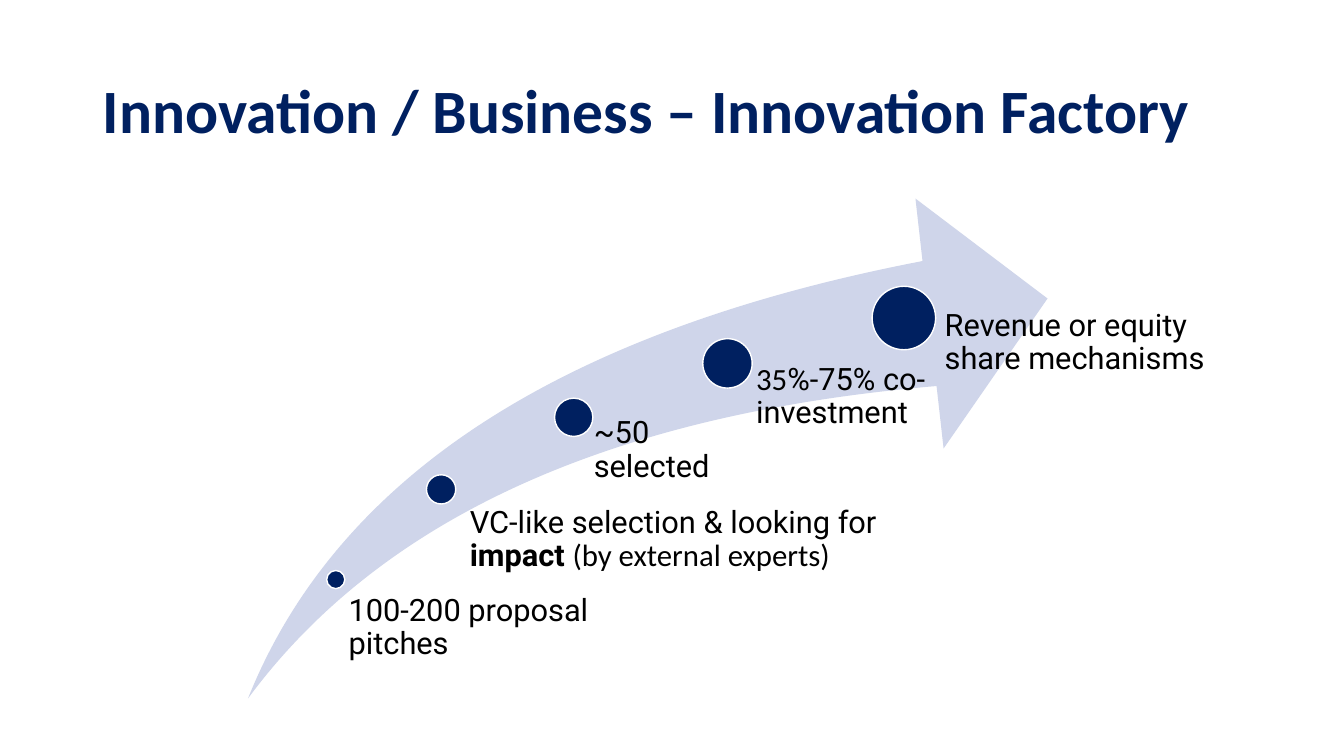
from dataclasses import dataclass

from pptx import Presentation
from pptx.dml.color import RGBColor
from pptx.enum.shapes import MSO_SHAPE
from pptx.enum.text import MSO_ANCHOR
from pptx.shapes.autoshape import Shape
from pptx.slide import Slide
from pptx.util import Inches, Pt

NAVY = RGBColor(0x00, 0x20, 0x60)
PALE_BLUE = RGBColor(0xCF, 0xD5, 0xEA)
WHITE = RGBColor(0xFF, 0xFF, 0xFF)
BLACK = RGBColor(0x00, 0x00, 0x00)
HEADING_FONT = "Calibri"
BODY_FONT = "Roboto"


@dataclass(frozen=True)
class Words:
    text: str
    font: str = BODY_FONT
    bold: bool = False


@dataclass(frozen=True)
class Box:
    left: float
    top: float
    width: float
    height: float


@dataclass(frozen=True)
class Stage:
    """A dot on the arrow (left, top, diameter) and its label; lengths in inches."""
    dot_left: float
    dot_top: float
    diameter: float
    label: Box
    inset: float
    words: tuple[Words, ...]


STAGES = (
    Stage(3.24, 5.66, 0.18, Box(3.36, 5.9, 3.31, 0.91), 0.1,
          (Words("100-200 proposal pitches"),)),
    Stage(4.23, 4.71, 0.29, Box(4.51, 5.03, 4.21, 1.07), 0.15,
          (Words("VC-like selection & looking for "),
           Words("impact ", bold=True),
           Words("(by external experts)", HEADING_FONT))),
    Stage(5.5, 3.95, 0.38, Box(5.69, 4.14, 1.53, 2.79), 0.2,
          (Words("~50 selected"),)),
    Stage(6.97, 3.36, 0.49, Box(7.24, 3.61, 2.35, 3.32), 0.26,
          (Words("35", HEADING_FONT), Words("%-75% co-investment"))),
    Stage(8.65, 2.84, 0.63, Box(9.04, 3.07, 3.07, 3.65), 0.33,
          (Words("Revenue or equity share mechanisms"),)),
)


def add_filled_shape(s: Slide, kind: MSO_SHAPE, box: Box, fill: RGBColor) -> Shape:
    sp = s.shapes.add_shape(kind, Inches(box.left), Inches(box.top),
                            Inches(box.width), Inches(box.height))
    sp.shadow.inherit = False
    sp.fill.solid()
    sp.fill.fore_color.rgb = fill
    sp.line.fill.background()
    return sp


def add_text(s: Slide, box: Box, words: tuple[Words, ...], size: int,
             color: RGBColor) -> Shape:
    sp = s.shapes.add_textbox(Inches(box.left), Inches(box.top),
                              Inches(box.width), Inches(box.height))
    tf = sp.text_frame
    tf.word_wrap = True
    p = tf.paragraphs[0]
    p.line_spacing = 0.9
    for part in words:
        r = p.add_run()
        r.text = part.text
        r.font.name = part.font
        r.font.size = Pt(size)
        r.font.bold = part.bold
        r.font.color.rgb = color
    return sp


def add_stage(s: Slide, stage: Stage) -> None:
    dot = add_filled_shape(
        s, MSO_SHAPE.OVAL,
        Box(stage.dot_left, stage.dot_top, stage.diameter, stage.diameter), NAVY)
    dot.line.color.rgb = WHITE
    dot.line.width = Pt(1)
    tf = add_text(s, stage.label, stage.words, 22, BLACK).text_frame
    tf.margin_left = Inches(stage.inset)
    tf.margin_top = tf.margin_right = tf.margin_bottom = 0


def main() -> None:
    prs = Presentation()
    prs.slide_width, prs.slide_height = Inches(13.33), Inches(7.5)
    s = prs.slides.add_slide(prs.slide_layouts[6])

    title = add_text(
        s, Box(0.92, 0.4, 11.5, 1.45),
        (Words("Innovation / Business – Innovation Factory", HEADING_FONT, True),),
        44, NAVY)
    title.text_frame.vertical_anchor = MSO_ANCHOR.MIDDLE

    arrow = add_filled_shape(s, MSO_SHAPE.SWOOSH_ARROW,
                             Box(2.46, 1.97, 7.93, 4.96), PALE_BLUE)
    arrow.adjustments[0] = 0.25
    arrow.adjustments[1] = 0.25

    for stage in STAGES:
        add_stage(s, stage)

    prs.save("out.pptx")


if __name__ == "__main__":
    main()
